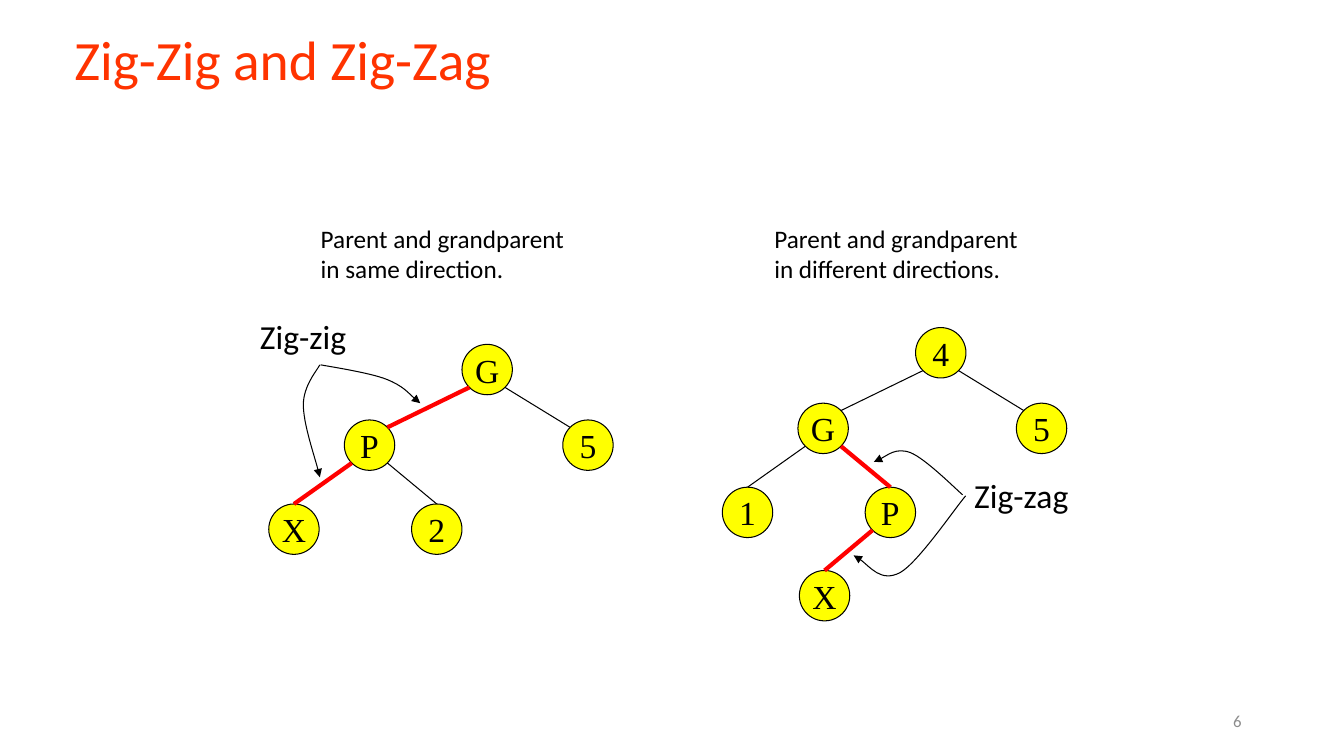
import pptx
import pptx.util
import pptx.dml.color
import pptx.enum.shapes
import pptx.enum.text
import pptx.oxml.ns
import pptx.oxml.xmlchemy

Pt = pptx.util.Pt
ALIGN = pptx.enum.text.PP_ALIGN
ANCHOR = pptx.enum.text.MSO_ANCHOR
qn = pptx.oxml.ns.qn
new_element = pptx.oxml.xmlchemy.OxmlElement


def color(hex_string):
    return pptx.dml.color.RGBColor.from_string(hex_string)


def write(shape, lines, size, font, hex_string, align, anchor, wrap=False):
    frame = shape.text_frame
    frame.word_wrap = wrap
    frame.vertical_anchor = anchor
    paragraph = frame.paragraphs[0]
    paragraph.alignment = align
    for index, line in enumerate(lines):
        if index:
            paragraph.add_line_break()
        run = paragraph.add_run()
        run.text = line
        run.font.size = Pt(size)
        run.font.name = font
        run.font.color.rgb = color(hex_string)
    return paragraph


presentation = pptx.Presentation()
presentation.slide_width = Pt(960)
presentation.slide_height = Pt(540)
slide = presentation.slides.add_slide(presentation.slide_layouts[6])

title = slide.shapes.add_textbox(Pt(46), Pt(26), Pt(895), Pt(38))
title_paragraph = write(title, ["Zig-Zig and Zig-Zag"], 39.6, "Calibri", "FF3300",
                        ALIGN.LEFT, ANCHOR.MIDDLE, True)
title_paragraph.line_spacing = 0.9

page_number = slide.shapes.add_textbox(Pt(678), Pt(500.5), Pt(216), Pt(28.8))
write(page_number, ["6"], 12, "Calibri", "8C8C8C", ALIGN.RIGHT, ANCHOR.MIDDLE, True)

captions = [
    (222, ["Parent and grandparent", "in same direction."]),
    (546, ["Parent and grandparent", "in different directions."]),
]
for left, lines in captions:
    caption = slide.shapes.add_textbox(Pt(left), Pt(156), Pt(190), Pt(51))
    write(caption, lines, 18, "Calibri", "000000", ALIGN.LEFT, ANCHOR.TOP)

labels = [("Zig-zig", 178, 222, 77), ("Zig-zag", 688.5, 335.5, 82)]
for text, left, top, width in labels:
    label = slide.shapes.add_textbox(Pt(left), Pt(top), Pt(width), Pt(36))
    write(label, [text], 24, "Calibri", "000000", ALIGN.CENTER, ANCHOR.MIDDLE)

RADIUS = 18
DIAGONAL = 12.73
zig_zig_nodes = {"G": (348, 264), "P": (264, 318), "5": (420, 318),
                 "X": (210, 378), "2": (312, 378)}
zig_zig_edges = [("G", "P", True), ("G", "5", False), ("P", "X", True), ("P", "2", False)]
zig_zag_nodes = {"4": (672, 252), "G": (588, 306), "5": (744, 306),
                 "1": (534, 366), "P": (636, 366), "X": (589, 425.5)}
zig_zag_edges = [("4", "G", False), ("4", "5", False), ("G", "1", False),
                 ("G", "P", True), ("P", "X", True)]

for nodes, edges in [(zig_zig_nodes, zig_zig_edges), (zig_zag_nodes, zig_zag_edges)]:
    circles = {}
    for name, (x, y) in nodes.items():
        circle = slide.shapes.add_shape(pptx.enum.shapes.MSO_SHAPE.OVAL, Pt(x - RADIUS),
                                        Pt(y - RADIUS), Pt(2 * RADIUS), Pt(2 * RADIUS))
        circle.shadow.inherit = False
        circle.fill.solid()
        circle.fill.fore_color.rgb = color("FFFF00")
        circle.line.color.rgb = color("000000")
        circle.line.width = Pt(0.75)
        write(circle, [name], 24, "Times New Roman", "000000", ALIGN.CENTER, ANCHOR.MIDDLE)
        circles[name] = circle

    root = next(iter(nodes))
    for parent, child, highlighted in edges:
        parent_x, parent_y = nodes[parent]
        child_x, child_y = nodes[child]
        side = 1 if child_x > parent_x else -1
        edge = slide.shapes.add_connector(
            pptx.enum.shapes.MSO_CONNECTOR.STRAIGHT,
            Pt(parent_x + side * DIAGONAL), Pt(parent_y + DIAGONAL),
            Pt(child_x - side * DIAGONAL), Pt(child_y - DIAGONAL))
        if parent != root:
            edge.end_connect(circles[child], 0)
        edge.line.color.rgb = color("FF0000" if highlighted else "000000")
        edge.line.width = Pt(3 if highlighted else 0.75)
        edge._element.spPr.append(new_element("a:effectLst"))

arrows = [
    [(229, 260.6), (236.9, 262.1), (265, 266.4), (276.5, 271.1),
     (288, 275.8), (295.2, 284.4), (300.2, 288)],
    [(228.5, 260.6), (226.1, 265), (216.7, 275.8), (216.7, 289.1),
     (216.7, 302.4), (226.1, 329.8), (228.5, 340.9)],
    [(687.6, 353.5), (681.8, 348.5), (661, 327.6), (650.2, 323.3),
     (640.1, 319.7), (629.3, 328.3), (624.2, 330)],
    [(689.8, 354.2), (681.8, 363.6), (655.9, 401.8), (643, 409),
     (629.3, 416.2), (617, 399.6), (609.8, 396.7)],
]
for start, *controls in arrows:
    builder = slide.shapes.build_freeform(Pt(start[0]), Pt(start[1]))
    builder.add_line_segments([(Pt(x), Pt(y)) for x, y in controls], close=False)
    arrow = builder.convert_to_shape()
    arrow.shadow.inherit = False
    arrow.fill.background()
    arrow.line.color.rgb = color("000000")
    arrow.line.width = Pt(0.75)
    segments = list(arrow._element.iter(qn("a:lnTo")))
    outline = segments[0].getparent()
    for first in (0, 3):
        curve = new_element("a:cubicBezTo")
        for segment in segments[first:first + 3]:
            curve.append(segment[0])
            outline.remove(segment)
        outline.append(curve)
    head = new_element("a:tailEnd")
    head.set("type", "triangle")
    arrow.line._get_or_add_ln().append(head)

presentation.save("out.pptx")
